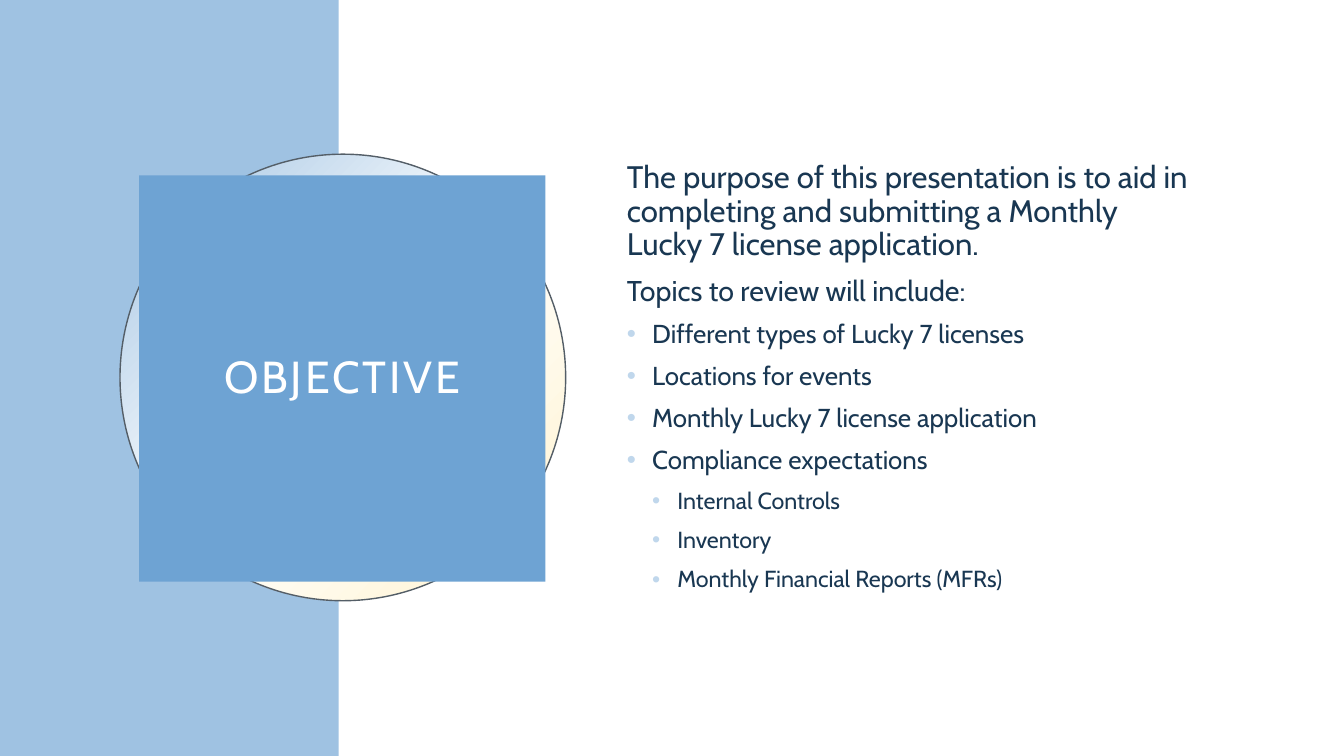
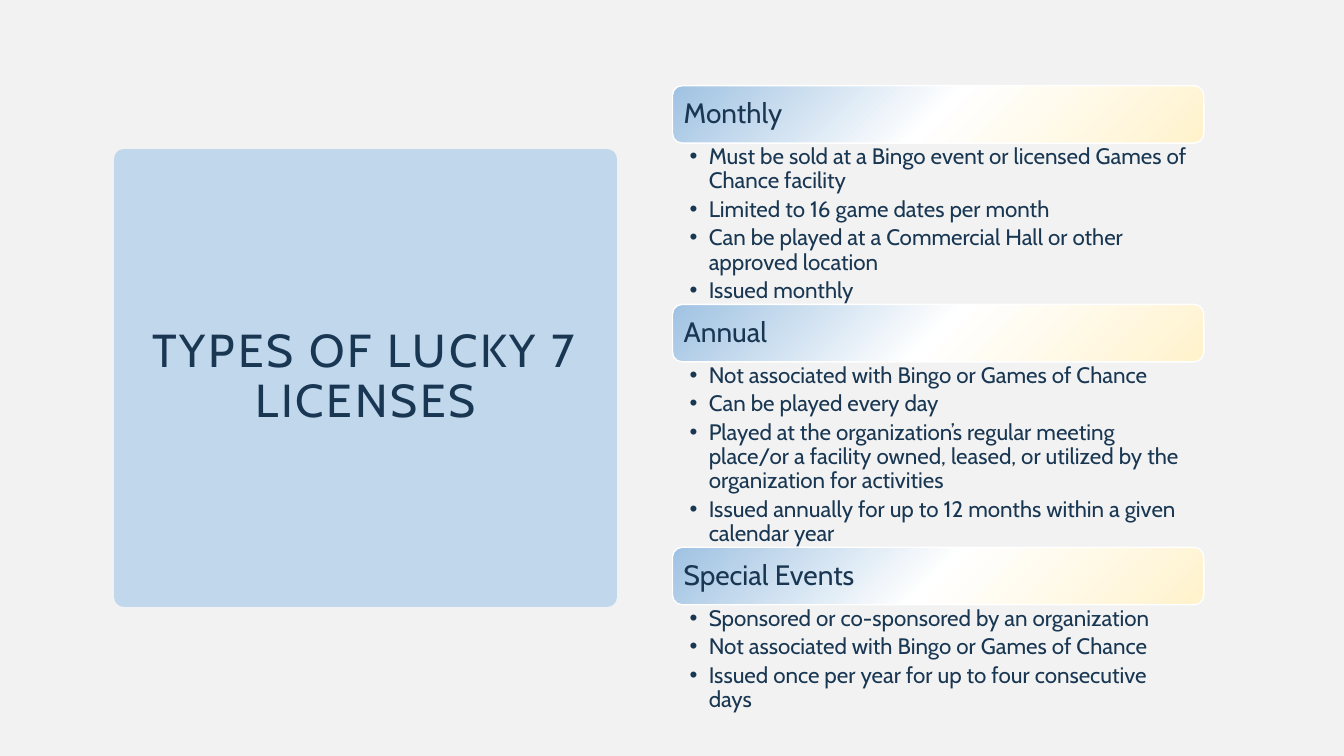
from pptx import Presentation
from pptx.dml.color import RGBColor
from pptx.enum.shapes import MSO_SHAPE
from pptx.enum.text import MSO_ANCHOR, PP_ALIGN
from pptx.oxml import parse_xml
from pptx.oxml.ns import nsdecls
from pptx.util import Inches, Pt

WHITE = "FFFFFF"
NAVY = "193752"
BLUE = "6EA3D3"
LIGHT = "9FC2E2"
PALE = "C0D7EC"
GRADIENT = ((0, LIGHT), (50, WHITE), (100, "FFF2CC"))
ANGLE = 45


def colour(value):
    return RGBColor.from_string(value)


def write(paragraph, text, size, color=NAVY, tracking=0, align=None,
          before=0, after=0, bullet=None, indent=0, hang=0.25):
    paragraph.alignment = align
    paragraph.line_spacing = 0.9
    paragraph.space_before = Pt(before)
    paragraph.space_after = Pt(after)
    span = paragraph.add_run()
    span.text = text
    span.font.name = Style.font
    span.font.size = Pt(size)
    span.font.color.rgb = colour(color)
    if tracking:
        span.font._element.set("spc", str(tracking * 100))
    if bullet:
        properties = paragraph._p.get_or_add_pPr()
        properties.set("marL", str(Inches(indent)))
        properties.set("indent", str(-Inches(hang)))
        for tag, content in (
            ("buClr", f'><a:srgbClr val="{bullet}"/></a:buClr>'),
            ("buFont", ' typeface="Arial"/>'),
            ("buChar", ' char="•"/>'),
        ):
            properties.append(parse_xml(f'<a:{tag} {nsdecls("a")}{content}'))


class Style:
    font = "Cabin"

    def __init__(self):
        self.deck = Presentation()
        self.deck.slide_width = Inches(13.33)
        self.deck.slide_height = Inches(7.5)
        self.page = None

    def add_page(self, background):
        self.page = self.deck.slides.add_slide(self.deck.slide_layouts[6])
        fill = self.page.background.fill
        fill.solid()
        fill.fore_color.rgb = colour(background)

    def shape(self, kind, left, top, width, height, fill=None, line=None, weight=1):
        box = self.page.shapes.add_shape(
            kind, Inches(left), Inches(top), Inches(width), Inches(height))
        box.shadow.inherit = False
        if fill:
            box.fill.solid()
            box.fill.fore_color.rgb = colour(fill)
        else:
            self.blend(box)
        if line:
            box.line.color.rgb = colour(line)
            box.line.width = Pt(weight)
        else:
            box.line.fill.background()
        return box

    def blend(self, box):
        stops = "".join(
            f'<a:gs pos="{place * 1000}"><a:srgbClr val="{value}"/></a:gs>'
            for place, value in GRADIENT)
        box._element.spPr.find(
            "{http://schemas.openxmlformats.org/drawingml/2006/main}prstGeom"
        ).addnext(parse_xml(
            f'<a:gradFill {nsdecls("a")} rotWithShape="1"><a:gsLst>{stops}</a:gsLst>'
            f'<a:lin ang="{ANGLE * 60000}" scaled="0"/></a:gradFill>'))

    def fit(self, box, anchor, insets):
        frame = box.text_frame
        frame.word_wrap = True
        frame.vertical_anchor = anchor
        (frame.margin_left, frame.margin_top,
         frame.margin_right, frame.margin_bottom) = map(Inches, insets)
        return frame

    def title(self, text, left, top, width, height, size, color, fill,
              line=None, weight=1):
        box = self.shape(MSO_SHAPE.RECTANGLE, left, top, width, height,
                         fill, line, weight)
        frame = self.fit(box, MSO_ANCHOR.MIDDLE, (0.2,) * 4)
        write(frame.paragraphs[0], text, size, color, tracking=2,
              align=PP_ALIGN.CENTER)

    def text(self, entries, left, top, width, height,
             anchor=MSO_ANCHOR.TOP, insets=(0.1, 0.05, 0.1, 0.05)):
        box = self.page.shapes.add_textbox(
            Inches(left), Inches(top), Inches(width), Inches(height))
        frame = self.fit(box, anchor, insets)
        for index, (words, options) in enumerate(entries):
            paragraph = frame.add_paragraph() if index else frame.paragraphs[0]
            write(paragraph, words, **options)

    def section(self, heading, points, top, height):
        left, width, band, edge = 6.67, 5.27, 0.57, 0.03
        self.shape(MSO_SHAPE.ROUNDED_RECTANGLE, left, top, width, band, line=WHITE)
        self.text([(heading, dict(size=20))], left + edge, top + edge,
                  width - 2 * edge, band - 2 * edge, MSO_ANCHOR.MIDDLE, (0.08,) * 4)
        bullet = dict(size=16, after=3.2, bullet=NAVY, indent=0.19, hang=0.19)
        self.text([(point, bullet) for point in points], left, top + band,
                  width, height, insets=(0.17, 0.02, 0.12, 0.02))
        return top + band + height


def objective(style):
    style.add_page(WHITE)
    style.shape(MSO_SHAPE.RECTANGLE, 0, 0, 3.36, 7.5, LIGHT)
    style.shape(MSO_SHAPE.OVAL, 1.19, 1.53, 4.42, 4.43, line="545E67")
    style.title("OBJECTIVE", 1.38, 1.74, 4.03, 4.03, 32, WHITE, BLUE)
    purpose = dict(size=22.2, before=10)
    lead = dict(size=20.4, before=10)
    topic = dict(size=18.5, before=10, bullet=PALE, indent=0.25)
    detail = dict(size=16.6, before=10, bullet=PALE, indent=0.5)
    style.text([
        ("The purpose of this presentation is to aid in completing and "
         "submitting a Monthly Lucky 7 license application.", purpose),
        ("Topics to review will include:", lead),
        ("Different types of Lucky 7 licenses", topic),
        ("Locations for events", topic),
        ("Monthly Lucky 7 license application", topic),
        ("Compliance expectations", topic),
        ("Internal Controls", detail),
        ("Inventory", detail),
        ("Monthly Financial Reports (MFRs)", detail),
    ], 6.12, 1.53, 5.82, 4.43, MSO_ANCHOR.MIDDLE)


def license_types(style):
    style.add_page("F2F2F2")
    style.title("TYPES OF LUCKY 7 LICENSES", 1.23, 1.58, 4.79, 4.34,
                33, NAVY, PALE, PALE, 15)
    sections = (
        ("Monthly", 1.6, (
            "Must be sold at a Bingo event or licensed Games of Chance facility",
            "Limited to 16 game dates per month",
            "Can be played at a Commercial Hall or other approved location",
            "Issued monthly")),
        ("Annual", 1.84, (
            "Not associated with Bingo or Games of Chance",
            "Can be played every day",
            "Played at the organization’s regular meeting place/or a facility "
            "owned, leased, or utilized by the organization for activities",
            "Issued annually for up to 12 months within a given calendar year")),
        ("Special Events", 0.86, (
            "Sponsored or co-sponsored by an organization",
            "Not associated with Bingo or Games of Chance",
            "Issued once per year for up to four consecutive days")),
    )
    top = 0.85
    for heading, height, points in sections:
        top = style.section(heading, points, top, height)


def main():
    style = Style()
    objective(style)
    license_types(style)
    style.deck.save("out.pptx")


if __name__ == "__main__":
    main()
